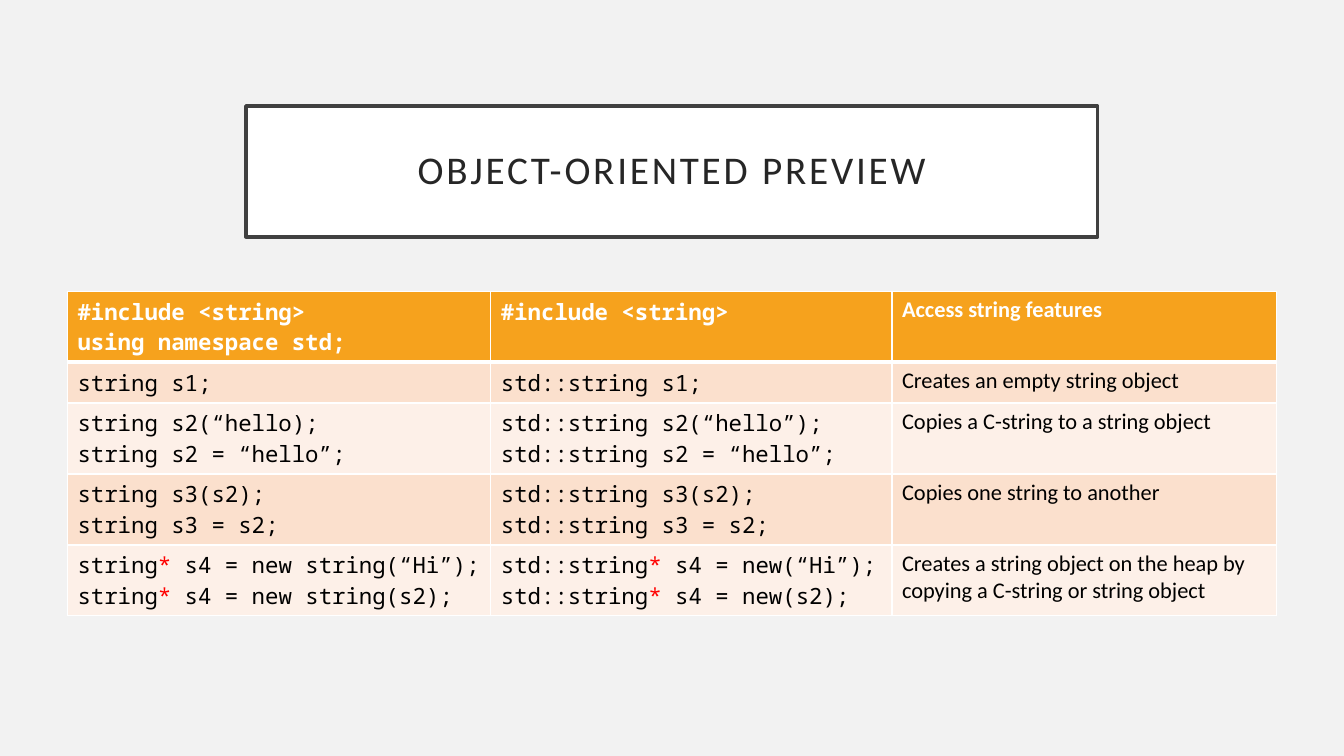
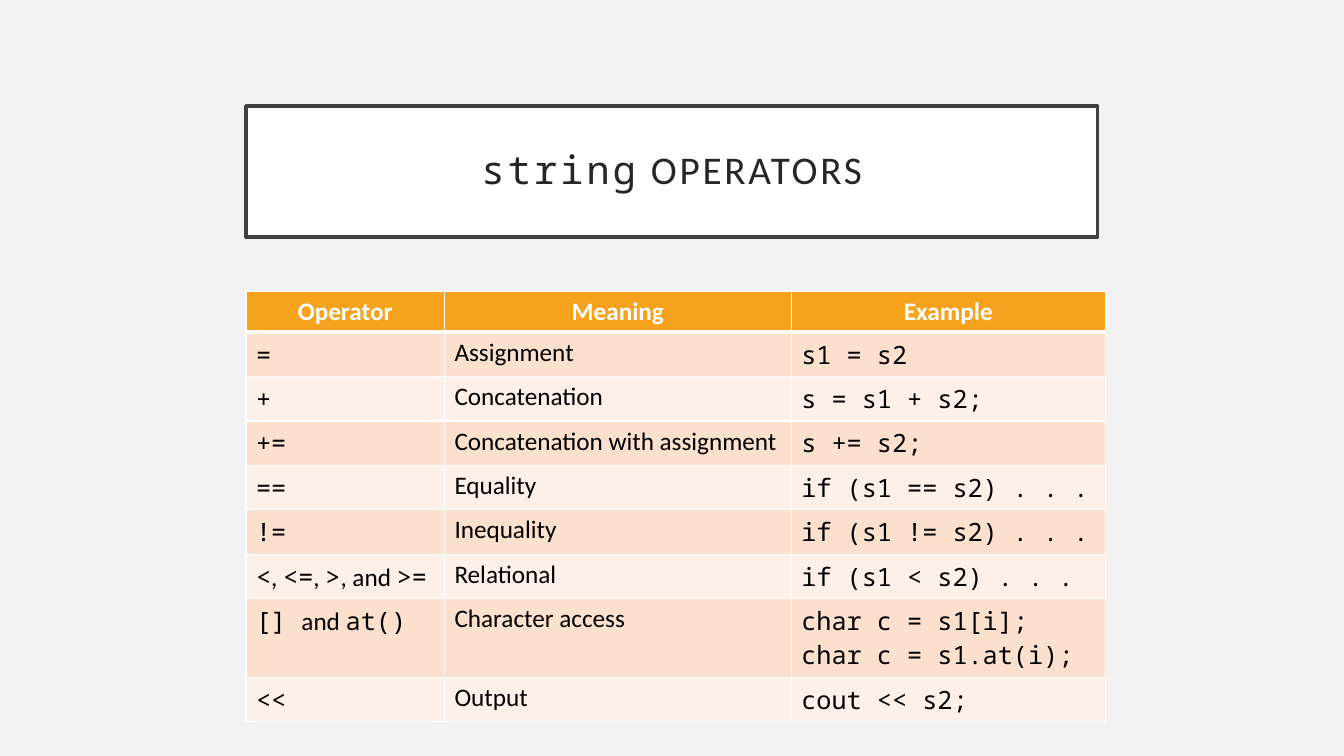
from dataclasses import dataclass
from typing import NamedTuple

import pptx
import pptx.dml.color
import pptx.enum.text
import pptx.oxml
import pptx.oxml.ns
import pptx.util
from pptx.util import Cm, Pt

COLORS = {
    "background": "F2F2F2",
    "white": "FFFFFF",
    "frame": "404040",
    "title": "262626",
    "text": "000000",
    "accent": "F6A21D",
    "band_dark": "FBE0CD",
    "band_light": "FDF0E8",
    "pointer": "FF0000",
}
SANS = "Calibri"
MONO = "Noto Sans Mono"
CENTER = pptx.enum.text.PP_ALIGN.CENTER
LEFT = pptx.enum.text.PP_ALIGN.LEFT
TITLE_ONLY = 5
TABLE_TOP = Cm(7.34)
ROW_HEIGHT = Cm(1.03)


class Run(NamedTuple):
    text: str
    font: str = MONO
    color: str = "text"


Line = list[Run]
Cell = str | list[Line]  # a plain string takes the font of its column


@dataclass
class TableSlide:
    title: Line
    left: float
    widths: list[float]
    size: int
    header_fonts: list[str]
    body_fonts: list[str]
    header_alignment: pptx.enum.text.PP_ALIGN
    rows: list[list[Cell]]


def pointer_lines(type_name: str, *endings: str) -> list[Line]:
    """Lines of code that each declare a pointer with a highlighted star."""
    return [[Run(type_name), Run("*", color="pointer"), Run(ending)] for ending in endings]


SLIDES = [
    TableSlide(
        title=[Run("OBJECT-ORIENTED PREVIEW", SANS, "title")],
        left=1.7,
        widths=[10.67, 10.11, 9.7],
        size=16,
        header_fonts=[MONO, MONO, SANS],
        body_fonts=[MONO, MONO, SANS],
        header_alignment=LEFT,
        rows=[
            ["#include <string>\nusing namespace std;", "#include <string>",
             "Access string features"],
            ["string s1;", "std::string s1;", "Creates an empty string object"],
            ["string s2(“hello);\nstring s2 = “hello”;",
             "std::string s2(“hello”);\nstd::string s2 = “hello”;",
             "Copies a C-string to a string object"],
            ["string s3(s2);\nstring s3 = s2;",
             "std::string s3(s2);\nstd::string s3 = s2;",
             "Copies one string to another"],
            [pointer_lines("string", " s4 = new string(“Hi”);", " s4 = new string(s2);"),
             pointer_lines("std::string", " s4 = new(“Hi”);", " s4 = new(s2);"),
             "Creates a string object on the heap by copying a C-string or string object"],
        ],
    ),
    TableSlide(
        title=[Run("string", MONO, "title"), Run(" OPERATORS", SANS, "title")],
        left=6.2,
        widths=[5, 8.74, 7.92],
        size=18,
        header_fonts=[SANS, SANS, SANS],
        body_fonts=[MONO, SANS, MONO],
        header_alignment=CENTER,
        rows=[
            ["Operator", "Meaning", "Example"],
            ["=", "Assignment", "s1 = s2"],
            ["+", "Concatenation", "s = s1 + s2;"],
            ["+=", "Concatenation with assignment", "s += s2;"],
            ["==", "Equality", "if (s1 == s2) . . ."],
            ["!=", "Inequality", "if (s1 != s2) . . ."],
            [[[Run("<"), Run(", ", SANS), Run("<="), Run(", ", SANS), Run(">"),
               Run(", and ", SANS), Run(">=")]],
             "Relational", "if (s1 < s2) . . ."],
            [[[Run("[] "), Run("and ", SANS), Run("at()")]],
             "Character access", "char c = s1[i];\nchar c = s1.at(i);"],
            ["<<", "Output", "cout << s2;"],
        ],
    ),
]


def rgb(name: str) -> pptx.dml.color.RGBColor:
    return pptx.dml.color.RGBColor.from_string(COLORS[name])


def write_line(paragraph, line: Line, size: int, bold: bool = False, spacing: int = 0) -> None:
    """Write the runs; what they all share is set on the paragraph."""
    paragraph.font.size = Pt(size)
    paragraph.font.bold = bold
    same_font = len({item.font for item in line}) == 1
    same_color = len({item.color for item in line}) == 1
    if same_font:
        paragraph.font.name = line[0].font
    if same_color:
        paragraph.font.color.rgb = rgb(line[0].color)
    for item in line:
        run = paragraph.add_run()
        run.text = item.text
        if not same_font:
            run.font.name = item.font
        if not same_color:
            run.font.color.rgb = rgb(item.color)
        if spacing:
            run._r.get_or_add_rPr().set("spc", str(spacing * 100))


def format_title(title, line: Line) -> None:
    title.left, title.top, title.width, title.height = Cm(6.2), Cm(2.67), Cm(21.46), Cm(3.3)
    title.fill.solid()
    title.fill.fore_color.rgb = rgb("white")
    title.line.color.rgb = rgb("frame")
    title.line.width = Pt(2.5)
    frame = title.text_frame
    frame.auto_size = pptx.enum.text.MSO_AUTO_SIZE.NONE
    frame.word_wrap = True
    frame.vertical_anchor = pptx.enum.text.MSO_ANCHOR.MIDDLE
    frame.margin_left = frame.margin_right = Cm(0.5)
    frame.margin_top = frame.margin_bottom = Cm(0.5)
    paragraph = frame.paragraphs[0]
    paragraph.alignment = CENTER
    paragraph.line_spacing = 0.9
    write_line(paragraph, line, size=28, spacing=2)


def set_borders(cell, top: float, bottom: float) -> None:
    properties = cell._tc.get_or_add_tcPr()
    widths = {"lnL": 1, "lnR": 1, "lnT": top, "lnB": bottom}
    for index, (tag, width) in enumerate(widths.items()):
        border = pptx.oxml.parse_xml(
            f'<a:{tag} {pptx.oxml.ns.nsdecls("a")} w="{Pt(width)}"><a:solidFill>'
            f'<a:srgbClr val="{COLORS["white"]}"/></a:solidFill></a:{tag}>'
        )
        properties.insert(index, border)


def fill_cell(cell, content: Cell, row: int, column: int, table_slide: TableSlide) -> None:
    header = row == 0
    cell.fill.solid()
    band = "band_dark" if row % 2 else "band_light"
    cell.fill.fore_color.rgb = rgb("accent" if header else band)
    set_borders(cell, top=3 if row == 1 else 1, bottom=3 if header else 1)
    if isinstance(content, str):
        fonts = table_slide.header_fonts if header else table_slide.body_fonts
        color = "white" if header else "text"
        content = [[Run(text, fonts[column], color)] for text in content.split("\n")]
    frame = cell.text_frame
    for index, line in enumerate(content):
        paragraph = frame.add_paragraph() if index else frame.paragraphs[0]
        paragraph.alignment = table_slide.header_alignment if header else LEFT
        write_line(paragraph, line, table_slide.size, bold=header)


def add_table(slide, table_slide: TableSlide) -> None:
    rows, widths = table_slide.rows, table_slide.widths
    table = slide.shapes.add_table(
        len(rows), len(widths), Cm(table_slide.left), TABLE_TOP,
        Cm(sum(widths)), ROW_HEIGHT * len(rows),
    ).table
    table.horz_banding = False
    for column, width in zip(table.columns, widths):
        column.width = Cm(width)
    for row, contents in enumerate(rows):
        for column, content in enumerate(contents):
            fill_cell(table.cell(row, column), content, row, column, table_slide)


def main() -> None:
    presentation = pptx.Presentation()
    presentation.slide_width, presentation.slide_height = Cm(33.87), Cm(19.05)
    background = presentation.slide_master.background.fill
    background.solid()
    background.fore_color.rgb = rgb("background")
    for table_slide in SLIDES:
        slide = presentation.slides.add_slide(presentation.slide_layouts[TITLE_ONLY])
        format_title(slide.shapes.title, table_slide.title)
        add_table(slide, table_slide)
    presentation.save("out.pptx")


if __name__ == "__main__":
    main()
